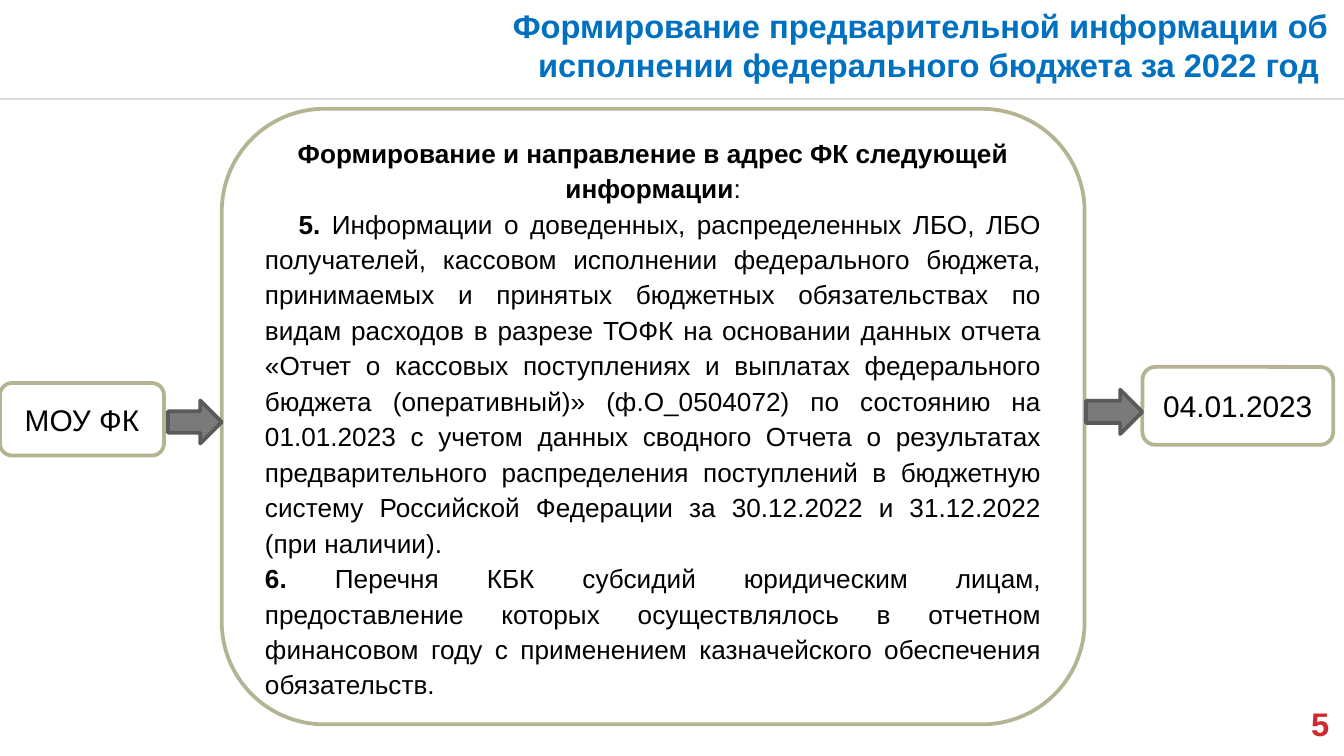
from dataclasses import dataclass
from lxml import etree
from pptx import Presentation
from pptx.dml.color import RGBColor
from pptx.enum.shapes import MSO_CONNECTOR, MSO_SHAPE
from pptx.enum.text import MSO_ANCHOR, PP_ALIGN
from pptx.oxml.ns import qn
from pptx.util import Inches, Pt

ROUND, ARROW = MSO_SHAPE.ROUNDED_RECTANGLE, MSO_SHAPE.RIGHT_ARROW
MID, RIGHT, FULL = PP_ALIGN.CENTER, PP_ALIGN.RIGHT, PP_ALIGN.JUSTIFY
TOP, CENTER = MSO_ANCHOR.TOP, MSO_ANCHOR.MIDDLE
LINE = MSO_CONNECTOR.STRAIGHT
COLS = 100
ROWS = COLS * 9 / 16
CELL = Inches(0.1)


@dataclass(frozen=True)
class Theme:
    font: str = "Arial"
    ink: str = "000000"
    blue: str = "0070C0"
    red: str = "D1282E"
    paper: str = "FFFFFF"
    edge: str = "B4B392"
    rule: str = "D9D9D9"
    dart: str = "7A7A7A"
    rim: str = "5A5A5A"
    head: float = 17.5
    body: float = 14
    label: float = 16


THEME = Theme()

LEAD = [("Формирование и направление в адрес ФК следующей информации", True),
        (":", False)]
FIFTH = [
    ("5.", True),
    (" Информации о доведенных, распределенных ЛБО, ЛБО получателей, "
     "кассовом исполнении федерального бюджета, принимаемых и принятых "
     "бюджетных обязательствах по видам расходов в разрезе ТОФК на основании "
     "данных отчета «Отчет о кассовых поступлениях и выплатах федерального "
     "бюджета (оперативный)» (ф.О_0504072) по состоянию на 01.01.2023 с учетом "
     "данных сводного Отчета о результатах предварительного распределения "
     "поступлений в бюджетную систему Российской Федерации за 30.12.2022 и "
     "31.12.2022 (при наличии).", False)]
SIXTH = [
    ("6. ", True),
    ("Перечня КБК субсидий юридическим лицам, предоставление которых "
     "осуществлялось в отчетном финансовом году с применением казначейского "
     "обеспечения обязательств.", False)]


def color(code):
    return RGBColor.from_string(code)


def place(box, col, row, wide, high):
    return [int(n * CELL) for n in (box[0] + col, box[1] + row, wide, high)]


def write(para, runs, size, ink, align):
    para.alignment = align
    for text, bold in runs:
        run = para.add_run()
        run.text = text
        font = run.font
        font.name, font.size, font.bold = THEME.font, Pt(size), bold
        font.color.rgb = color(ink)


def bare(frame):
    frame.word_wrap = True
    frame.vertical_anchor = TOP
    frame.margin_left = frame.margin_right = 0
    frame.margin_top = frame.margin_bottom = 0


def block(slide, kind, area, fill, edge):
    shape = slide.shapes.add_shape(kind, *area)
    shape.shadow.inherit = False
    shape.fill.solid()
    shape.fill.fore_color.rgb = color(fill)
    shape.line.color.rgb = color(edge)
    shape.line.width = Pt(2)
    return shape


def panel(slide, area):
    shape = block(slide, ROUND, area, THEME.paper, THEME.edge)
    frame = shape.text_frame
    frame.word_wrap = True
    frame.vertical_anchor = CENTER
    return frame


def head(slide, box):
    rule = slide.shapes.add_connector(LINE, 0, 0, 0, 0)
    rule.left, rule.top, rule.width, rule.height = place(box, 0, 7.4, box[2], 0)
    rule.line.color.rgb = color(THEME.rule)
    rule.line.width = Pt(1)
    etree.SubElement(rule._element.spPr, qn("a:effectLst"))
    title = slide.shapes.title
    title.left, title.top, title.width, title.height = place(
        box, 25.8, 0.4, 73.1, 8.8)
    frame = title.text_frame
    bare(frame)
    text = ("Формирование предварительной информации об исполнении "
            "федерального бюджета за 2022 год ")
    write(frame.paragraphs[0], [(text, True)], THEME.head, THEME.blue, RIGHT)


def flow(slide, box):
    frame = panel(slide, place(box, 16.5, 0, 64.2, box[3]))
    for spot, (runs, align) in enumerate(
            [(LEAD, MID), (FIFTH, FULL), (SIXTH, FULL)]):
        para = frame.add_paragraph() if spot else frame.paragraphs[0]
        para.line_spacing = 1.13
        write(para, runs, THEME.body, THEME.ink, align)
    frame.paragraphs[1]._p.get_or_add_pPr().set("indent", str(Inches(0.25)))

    for text, area in [("МОУ ФК", (0, 20.4, 12.2, 5.4)),
                       ("04.01.2023", (85, 19.2, 14.2, 5.8))]:
        frame = panel(slide, place(box, *area))
        write(frame.paragraphs[0], [(text, False)],
              THEME.label, THEME.ink, MID)

    for area in [(12.5, 21.7, 4, 3.2), (80.8, 20.9, 4.2, 3.3)]:
        block(slide, ARROW, place(box, *area), THEME.dart, THEME.rim)


def foot(slide, box):
    frame = slide.shapes.add_textbox(*place(box, 0, 0, *box[2:])).text_frame
    bare(frame)
    write(frame.paragraphs[0], [("5", True)], THEME.head, THEME.red, RIGHT)


def main():
    deck = Presentation()
    deck.slide_width, deck.slide_height = int(COLS * CELL), int(ROWS * CELL)
    slide = deck.slides.add_slide(deck.slide_layouts[5])
    head(slide, (0, 0, COLS, 8.1))
    flow(slide, (0, 8.1, COLS, 45.8))
    foot(slide, (75.9, 52.4, 23, 2.9))
    deck.save("out.pptx")


if __name__ == "__main__":
    main()
